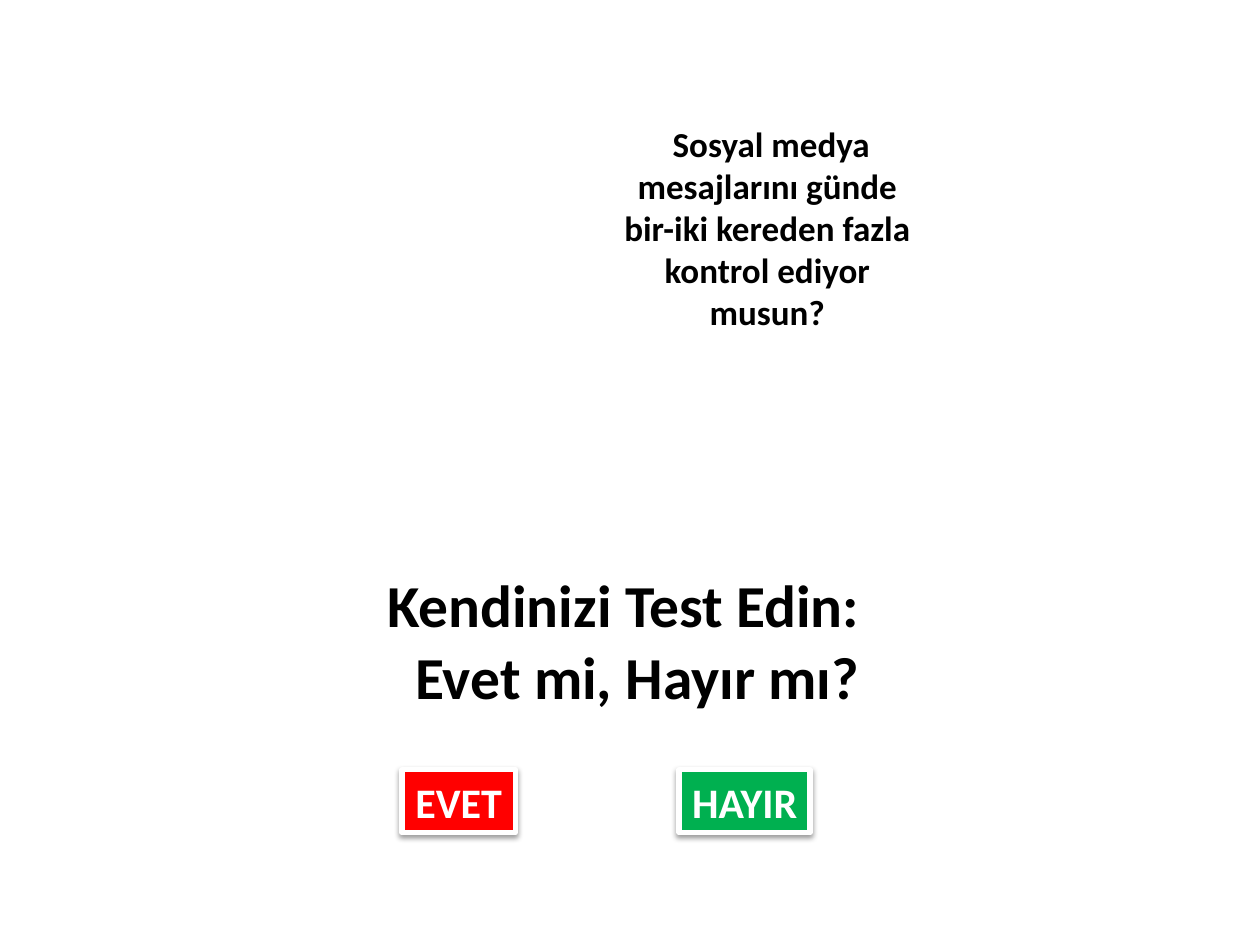
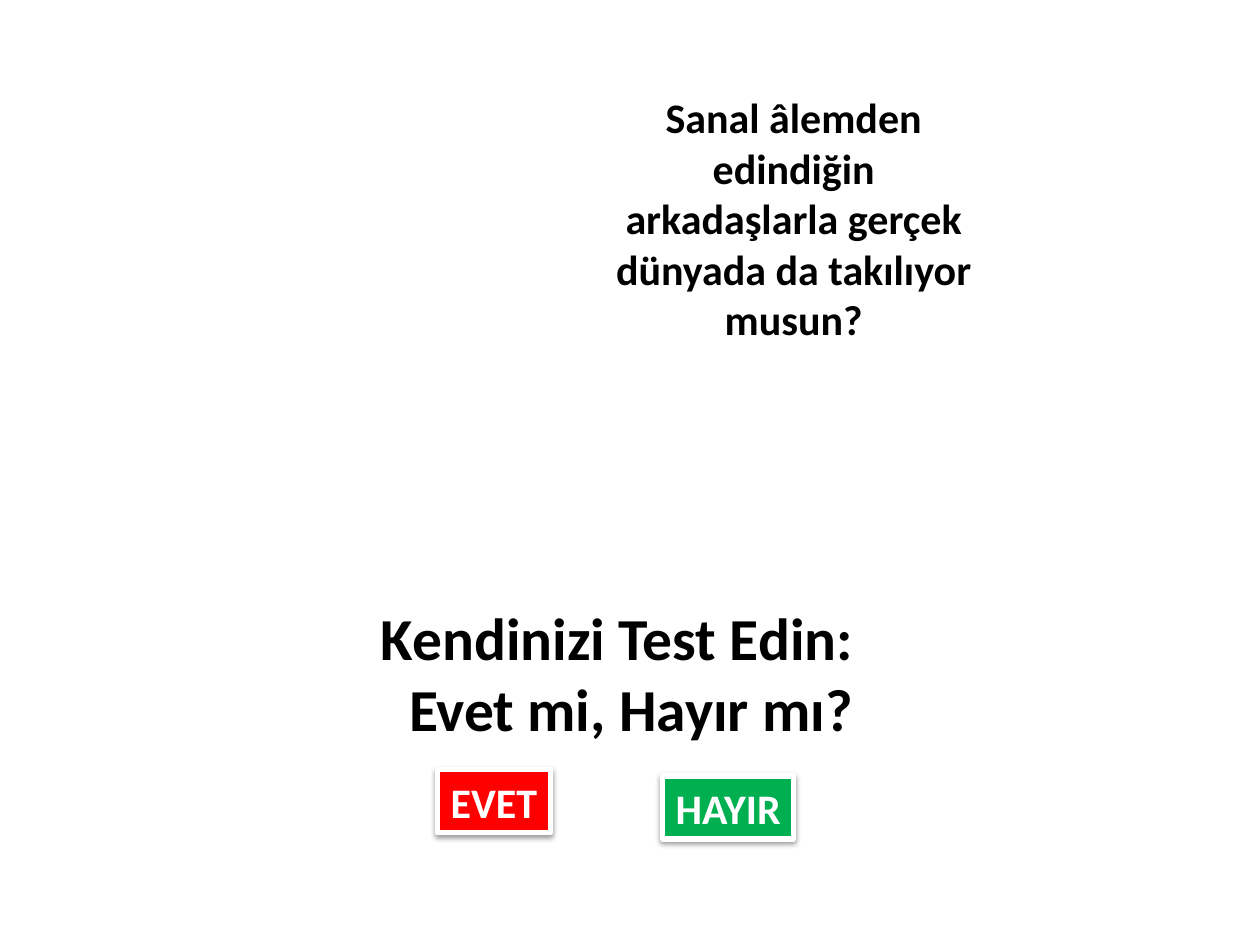
import pptx
import pptx.dml.color
import pptx.enum.shapes
import pptx.enum.text
import pptx.oxml
import pptx.oxml.ns
import pptx.util
from pptx.util import Inches

RED = pptx.dml.color.RGBColor(0xFF, 0x00, 0x00)
GREEN = pptx.dml.color.RGBColor(0x00, 0xB0, 0x50)
WHITE = pptx.dml.color.RGBColor(0xFF, 0xFF, 0xFF)
BLACK = pptx.dml.color.RGBColor(0x00, 0x00, 0x00)
FONT = "Calibri"
TITLE_SIZE = 34
ANSWER_SIZE = 24
TITLE_ONLY_LAYOUT = 5
ALIGN = pptx.enum.text.PP_ALIGN

TITLE = "Kendinizi Test Edin: Evet mi, Hayır mı?"
ANSWERS = [("EVET", RED, 0.9), ("HAYIR", GREEN, 1.04)]
ANSWER_HEIGHT = 0.5

QUIZ_SLIDES = [
    {
        "question": [" Sosyal medya", "mesajlarını günde", "bir-iki kereden fazla",
                     "kontrol ediyor", "musun?"],
        "question_size": 20,
        "question_box": (4.45, 0.92, 3.28, 1.78),
        "title_box": (2.32, 4.46, 4.6, 1.25),
        "answer_positions": [(3.19, 6.11), (5.39, 6.11)],
    },
    {
        "question": ["Sanal âlemden", "edindiğin", "arkadaşlarla gerçek",
                     "dünyada da takılıyor", "musun?"],
        "question_size": 24,
        "question_box": (3.8, 0.68, 5, 2.12),
        "title_box": (2.01, 4.72, 4.86, 1.25),
        "answer_positions": [(3.47, 6.11), (5.26, 6.16)],
    },
]

SHADOW_XML = (
    f'<a:outerShdw {pptx.oxml.ns.nsdecls("a")} blurRad="40000" dist="20000" '
    'dir="5400000" rotWithShape="0"><a:srgbClr val="000000">'
    '<a:alpha val="38000"/></a:srgbClr></a:outerShdw>'
)


def write_text(shape, lines, size, color, alignment, wrap=True):
    frame = shape.text_frame
    frame.word_wrap = wrap
    frame.auto_size = pptx.enum.text.MSO_AUTO_SIZE.NONE
    frame.vertical_anchor = pptx.enum.text.MSO_ANCHOR.TOP
    frame.text = "\n".join(lines)
    for paragraph in frame.paragraphs:
        paragraph.alignment = alignment
        paragraph.font.name = FONT
        paragraph.font.size = pptx.util.Pt(size)
        paragraph.font.bold = True
        paragraph.font.color.rgb = color


def place_title(slide, box):
    title = slide.shapes.title
    title.left, title.top, title.width, title.height = map(Inches, box)
    write_text(title, [TITLE], TITLE_SIZE, BLACK, ALIGN.RIGHT)


def add_answer(slide, label, color, left, top, width):
    answer = slide.shapes.add_shape(
        pptx.enum.shapes.MSO_SHAPE.RECTANGLE,
        *map(Inches, (left, top, width, ANSWER_HEIGHT)))
    answer.fill.solid()
    answer.fill.fore_color.rgb = color
    answer.line.color.rgb = WHITE
    answer.line.width = pptx.util.Pt(3)
    answer.shadow.inherit = False
    effects = answer._element.spPr.find(pptx.oxml.ns.qn("a:effectLst"))
    effects.append(pptx.oxml.parse_xml(SHADOW_XML))
    write_text(answer, [label], ANSWER_SIZE, WHITE, ALIGN.CENTER, wrap=False)


def build_quiz_slide(presentation, quiz):
    slide = presentation.slides.add_slide(presentation.slide_layouts[TITLE_ONLY_LAYOUT])
    place_title(slide, quiz["title_box"])
    for (label, color, width), (left, top) in zip(ANSWERS, quiz["answer_positions"]):
        add_answer(slide, label, color, left, top, width)
    question = slide.shapes.add_textbox(*map(Inches, quiz["question_box"]))
    write_text(question, quiz["question"], quiz["question_size"], BLACK, ALIGN.CENTER)


def main():
    presentation = pptx.Presentation()
    presentation.slide_width = Inches(10)
    presentation.slide_height = Inches(7.5)
    for quiz in QUIZ_SLIDES:
        build_quiz_slide(presentation, quiz)
    presentation.save("out.pptx")


if __name__ == "__main__":
    main()
